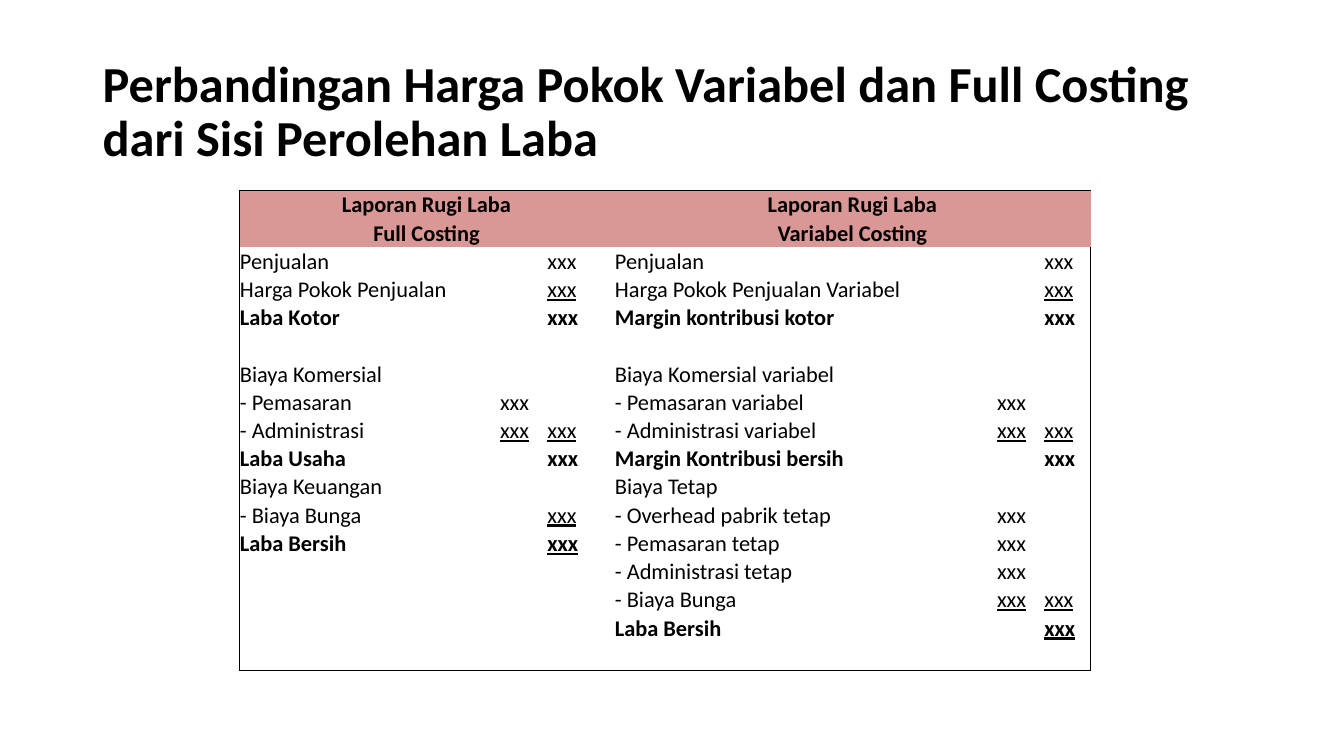
from lxml import etree
from pptx import Presentation
from pptx import util as u
from pptx.dml.color import RGBColor
from pptx.enum import text
from pptx.oxml import ns

BLACK = RGBColor(0x00, 0x00, 0x00)
ROSE = RGBColor(0xD9, 0x97, 0x95)
NO_STYLE = "{2D5ABB26-0587-4C30-8999-92F81FD0307C}"

TITLE = "Perbandingan Harga Pokok Variabel dan Full Costing dari Sisi Perolehan Laba"
HEADINGS = [
    ("Laporan Rugi Laba", "Laporan Rugi Laba"),
    ("Full Costing", "Variabel Costing"),
]
COLUMN_WIDTHS = [2.58, 0.47, 0.67, 3.79, 0.47, 0.47]
ROW_COUNT = 17
ROW_HEIGHT = 0.28

NONE, PLAIN, LINED = range(3)
FULL_COSTING = [
    ("Penjualan", NONE, PLAIN),
    ("Harga Pokok Penjualan", NONE, LINED),
    ("Laba Kotor", NONE, PLAIN),
    ("", NONE, NONE),
    ("Biaya Komersial", NONE, NONE),
    ("- Pemasaran", PLAIN, NONE),
    ("- Administrasi", LINED, LINED),
    ("Laba Usaha", NONE, PLAIN),
    ("Biaya Keuangan", NONE, NONE),
    ("- Biaya Bunga", NONE, LINED),
    ("Laba Bersih", NONE, LINED),
]
VARIABLE_COSTING = [
    ("Penjualan", NONE, PLAIN),
    ("Harga Pokok Penjualan Variabel", NONE, LINED),
    ("Margin kontribusi kotor", NONE, PLAIN),
    ("", NONE, NONE),
    ("Biaya Komersial variabel", NONE, NONE),
    ("- Pemasaran variabel", PLAIN, NONE),
    ("- Administrasi variabel", LINED, LINED),
    ("Margin Kontribusi bersih", NONE, PLAIN),
    ("Biaya Tetap", NONE, NONE),
    ("- Overhead pabrik tetap", PLAIN, NONE),
    ("- Pemasaran tetap", PLAIN, NONE),
    ("- Administrasi tetap", PLAIN, NONE),
    ("- Biaya Bunga", LINED, LINED),
    ("Laba Bersih", NONE, LINED),
]


class SlideBuilder:
    font_name = "Calibri"
    title_size = 36
    table_size = 16
    border_width = 0.5

    def __init__(self, slide):
        self.slide = slide

    def add_run(self, paragraph, words, size, bold=False, underline=False):
        run = paragraph.add_run()
        run.text = words
        run.font.name = self.font_name
        run.font.size = u.Pt(size)
        run.font.bold = bold
        run.font.underline = underline
        run.font.color.rgb = BLACK

    def add_title(self, words, left, top, width, height):
        shape = self.slide.shapes.add_textbox(
            u.Inches(left), u.Inches(top), u.Inches(width), u.Inches(height))
        frame = shape.text_frame
        frame.word_wrap = True
        frame.vertical_anchor = text.MSO_ANCHOR.MIDDLE
        paragraph = frame.paragraphs[0]
        paragraph.line_spacing = 0.9
        self.add_run(paragraph, words, self.title_size, bold=True)

    def add_table(self, left, top, widths, row_count, row_height):
        frame = self.slide.shapes.add_table(
            row_count, len(widths), u.Inches(left), u.Inches(top),
            u.Inches(sum(widths)), u.Inches(row_count * row_height))
        table = frame.table
        table.first_row = table.horz_banding = False
        next(frame.element.iter(ns.qn("a:tableStyleId"))).text = NO_STYLE
        for column, width in zip(table.columns, widths):
            column.width = u.Inches(width)
        for row in table.rows:
            row.height = u.Inches(row_height)
        last_row, last_column = row_count - 1, len(widths) - 1
        for r in range(row_count):
            for c in range(len(widths)):
                edges = {"L": c == 0, "R": c == last_column,
                         "T": r == 0, "B": r == last_row}
                self.style_cell(table.cell(r, c), edges)
        return table

    def style_cell(self, cell, edges):
        cell.margin_left = cell.margin_right = cell.margin_top = u.Inches(0.01)
        cell.margin_bottom = 0
        cell.vertical_anchor = text.MSO_ANCHOR.BOTTOM
        properties = cell._tc.get_or_add_tcPr()
        for side, visible in edges.items():
            if visible:
                line = etree.SubElement(properties, ns.qn(f"a:ln{side}"),
                                        w=str(u.Pt(self.border_width)))
                fill = etree.SubElement(line, ns.qn("a:solidFill"))
                etree.SubElement(fill, ns.qn("a:srgbClr"), val=str(BLACK))
        cell.fill.background()
        etree.SubElement(cell.text_frame.paragraphs[0]._p, ns.qn("a:endParaRPr"),
                         sz=str(self.table_size * 100))

    def add_heading(self, table, row, column, words):
        cell = table.cell(row, column)
        cell.merge(table.cell(row, column + 2))
        for offset in range(3):
            fill = table.cell(row, column + offset).fill
            fill.solid()
            fill.fore_color.rgb = ROSE
        paragraph = cell.text_frame.paragraphs[0]
        paragraph.alignment = text.PP_ALIGN.CENTER
        self.add_run(paragraph, words, self.table_size, bold=True)

    def add_entry(self, table, row, column, label, inner, outer):
        bold = label.startswith(("Laba", "Margin"))
        values = [(label, PLAIN if label else NONE), ("xxx", inner), ("xxx", outer)]
        for offset, (words, style) in enumerate(values):
            if style != NONE:
                paragraph = table.cell(row, column + offset).text_frame.paragraphs[0]
                self.add_run(paragraph, words, self.table_size, bold, style == LINED)


def main():
    presentation = Presentation()
    presentation.slide_width = u.Inches(13.33)
    presentation.slide_height = u.Inches(7.5)
    builder = SlideBuilder(presentation.slides.add_slide(presentation.slide_layouts[6]))
    builder.add_title(TITLE, 0.92, 0.4, 11.5, 1.45)
    table = builder.add_table(2.37, 1.89, COLUMN_WIDTHS, ROW_COUNT, ROW_HEIGHT)
    for row, headings in enumerate(HEADINGS):
        for side, words in enumerate(headings):
            builder.add_heading(table, row, side * 3, words)
    for side, statement in enumerate((FULL_COSTING, VARIABLE_COSTING)):
        for row, entry in enumerate(statement, start=len(HEADINGS)):
            builder.add_entry(table, row, side * 3, *entry)
    presentation.save("out.pptx")


if __name__ == "__main__":
    main()
